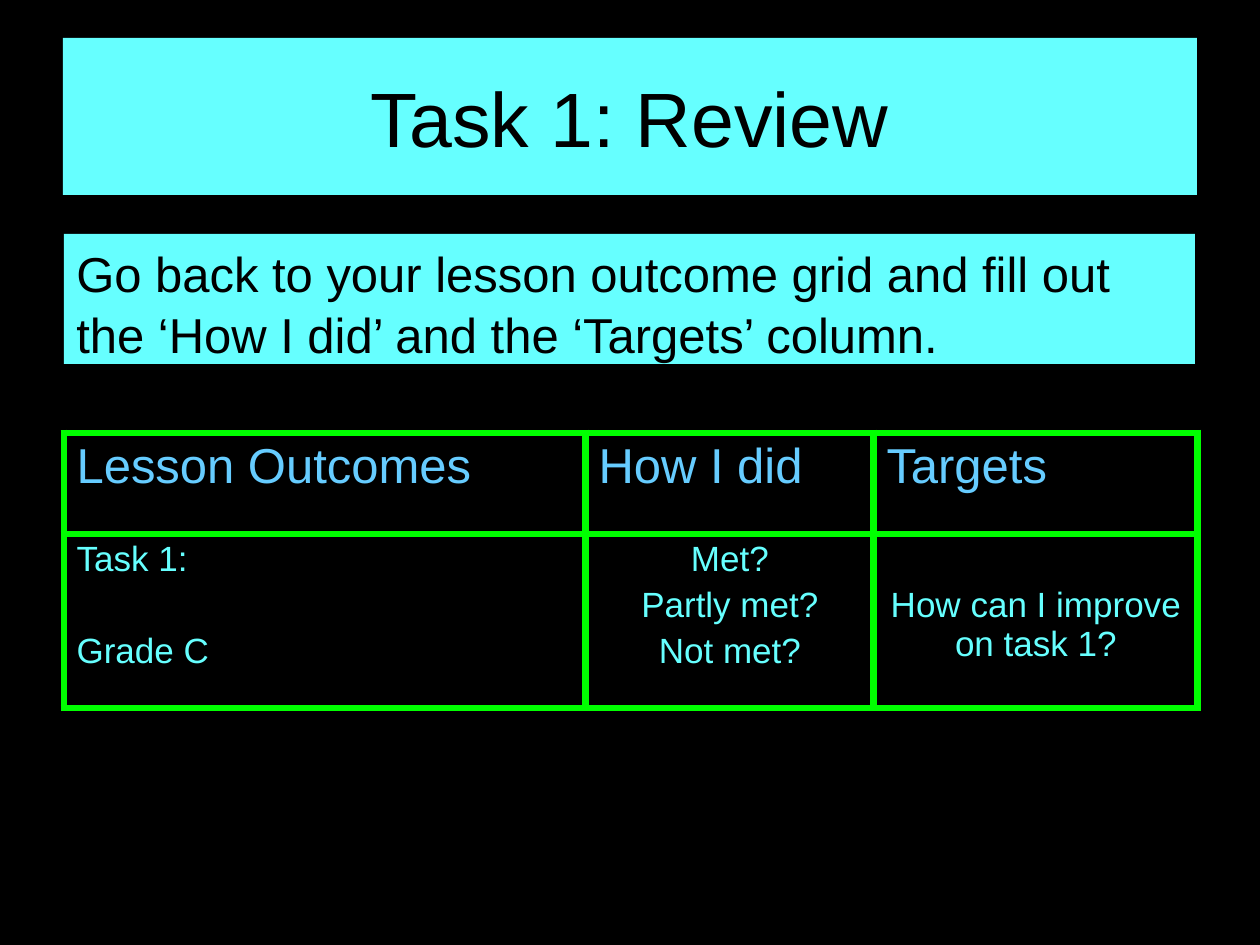
from dataclasses import dataclass, field
from typing import Any

from lxml.etree import SubElement
from pptx import Presentation
from pptx.dml.color import RGBColor
from pptx.enum.shapes import MSO_SHAPE
from pptx.enum.text import MSO_ANCHOR, PP_ALIGN
from pptx.oxml.ns import qn
from pptx.util import Emu, Pt

SCALE = 914400 / 126
BLACK, AQUA, SKY, GREEN = "000000", "66FFFF", "66CCFF", "00FF00"


@dataclass
class Style:
    size: int
    color: str
    para: dict[str, Any] = field(default_factory=dict)


@dataclass
class Panel:
    box: tuple[int, int, int, int]
    text: str
    style: Style
    anchor: MSO_ANCHOR


@dataclass
class Cell:
    lines: list[str]
    style: Style
    top: int = 6


def px(count: int) -> Emu:
    return Emu(round(count * SCALE))


def paint(target: Any, color: str) -> None:
    target.solid()
    target.fore_color.rgb = RGBColor.from_string(color)


def apply(target: Any, values: dict[str, Any]) -> None:
    for name, value in values.items():
        setattr(target, name, value)


def write(frame: Any, lines: list[str], style: Style) -> None:
    frame.word_wrap = True
    for index, line in enumerate(lines):
        para = frame.paragraphs[0] if index == 0 else frame.add_paragraph()
        values = dict(style.para)
        if index == 0:
            values.pop("space_before", None)
        apply(para, values)
        run = para.add_run()
        run.text = line
        apply(run.font, {"name": "Arial", "size": Pt(style.size), "bold": False})
        paint(run.font.fill, style.color)


def draw_panel(slide: Any, panel: Panel) -> None:
    shape = slide.shapes.add_shape(MSO_SHAPE.RECTANGLE, *map(px, panel.box))
    shape.shadow.inherit = False
    shape.line.fill.background()
    paint(shape.fill, AQUA)
    shape.text_frame.vertical_anchor = panel.anchor
    write(shape.text_frame, [panel.text], panel.style)


def outline(cell: Any, color: str, width: float) -> None:
    props = cell._tc.get_or_add_tcPr()
    for side in ("lnL", "lnR", "lnT", "lnB"):
        line = SubElement(props, qn(f"a:{side}"), w=str(Pt(width)))
        fill = SubElement(line, qn("a:solidFill"))
        SubElement(fill, qn("a:srgbClr"), val=color)


def draw_grid(slide: Any, left: int, top: int, cols: list[int],
              rows: list[int], cells: list[list[Cell]]) -> None:
    box = (left, top, sum(cols), sum(rows))
    table = slide.shapes.add_table(len(rows), len(cols), *map(px, box)).table
    apply(table, {"first_row": False, "horz_banding": False})
    for col, width in zip(table.columns, cols):
        col.width = px(width)
    for row, height, items in zip(table.rows, rows, cells):
        row.height = px(height)
        for cell, item in zip(row.cells, items):
            outline(cell, GREEN, 4.5)
            paint(cell.fill, BLACK)
            cell.margin_top = px(item.top)
            write(cell.text_frame, item.lines, item.style)


TITLE = Style(44, BLACK, {"alignment": PP_ALIGN.CENTER})
BODY = Style(28, BLACK, {"alignment": PP_ALIGN.LEFT, "line_spacing": 1.05})
HEAD = Style(28, SKY)
TASK = Style(20, AQUA, {"space_before": Pt(30)})
NOTE = Style(20, AQUA, {"alignment": PP_ALIGN.CENTER, "space_before": Pt(4)})

PANELS = [
    Panel((63, 38, 1134, 157), "Task 1: Review", TITLE, MSO_ANCHOR.MIDDLE),
    Panel((64, 234, 1131, 130),
          "Go back to your lesson outcome grid and fill out "
          "the ‘How I did’ and the ‘Targets’ column.", BODY, MSO_ANCHOR.TOP),
]
CELLS = [
    [Cell([name], HEAD) for name in ("Lesson Outcomes", "How I did", "Targets")],
    [
        Cell(["Task 1:", "Grade C"], TASK),
        Cell(["Met?", "Partly met?", "Not met?"], NOTE),
        Cell(["How can I improve on task 1?"], NOTE, top=52),
    ],
]


def main() -> None:
    deck = Presentation()
    apply(deck, {"slide_width": px(1260), "slide_height": px(945)})
    slide = deck.slides.add_slide(deck.slide_layouts[6])
    paint(slide.background.fill, BLACK)
    for panel in PANELS:
        draw_panel(slide, panel)
    draw_grid(slide, 64, 433, [522, 288, 324], [101, 174], CELLS)
    deck.save("out.pptx")


if __name__ == "__main__":
    main()
